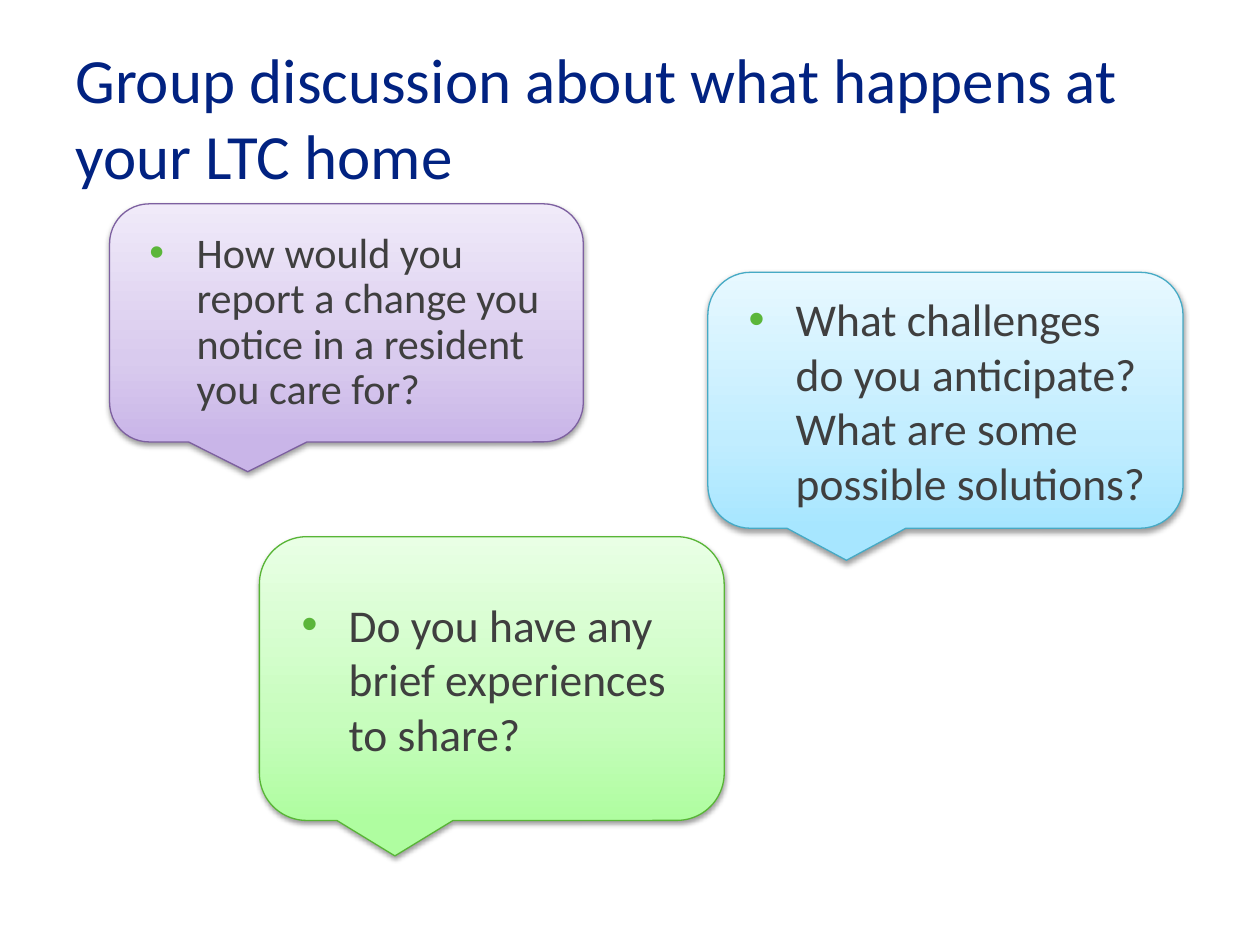
from dataclasses import dataclass
from lxml.etree import SubElement
from pptx import Presentation
from pptx.dml.color import RGBColor
from pptx.enum.shapes import MSO_SHAPE
from pptx.enum.text import MSO_ANCHOR, PP_ALIGN
from pptx.oxml import parse_xml
from pptx.oxml.ns import nsdecls, qn
from pptx.util import Cm, Pt


@dataclass(frozen=True)
class Theme:
    font: str = "Calibri"
    title: str = "012281"
    text: str = "3F3F3F"
    bullet: str = "5BB63A"
    head: float = 36
    body: float = 26
    small: float = 24.1
    # Each tone holds the stops from bottom to top, then the line.
    purple: tuple = ("C9B5E8", "D9CBEE", "F0EAF9", "7D60A0")
    blue: tuple = ("A7E6FF", "C1EDFF", "E7F8FF", "46AAC5")
    green: tuple = ("AFFDA0", "C7FDBD", "E9FFE5", "58B536")


THEME = Theme()


def style(para, size, color):
    para.alignment = PP_ALIGN.LEFT
    para.font.name = THEME.font
    para.font.size = Pt(size)
    para.font.color.rgb = RGBColor.from_string(color)


def write(shape, text):
    frame = shape.text_frame
    frame.word_wrap = True
    frame.vertical_anchor = MSO_ANCHOR.MIDDLE
    para = frame.paragraphs[0]
    para.text = text
    return para


def add_title(slide, text):
    box = slide.shapes.add_textbox(Cm(1.27), Cm(0.76), Cm(22.86), Cm(3.18))
    style(write(box, text), THEME.head, THEME.title)


def add_bullet(para):
    props = para._p.get_or_add_pPr()
    props.set("marL", str(Cm(1.27)))
    props.set("indent", str(-Cm(0.95)))
    color = SubElement(props, qn("a:buClr"))
    SubElement(color, qn("a:srgbClr"), val=THEME.bullet)
    SubElement(props, qn("a:buFont"), typeface="Arial")
    SubElement(props, qn("a:buChar"), char="•")


def shade(shape, colors):
    """Fill with a gradient that runs from bottom to top."""
    stops = "".join(
        f'<a:gs pos="{pos}"><a:srgbClr val="{color}"/></a:gs>'
        for pos, color in zip((0, 35000, 100000), colors)
    )
    shape.fill.background()
    plain = shape._element.spPr.find(qn("a:noFill"))
    plain.getparent().replace(plain, parse_xml(
        f'<a:gradFill {nsdecls("a")} rotWithShape="1"><a:gsLst>{stops}</a:gsLst>'
        '<a:lin ang="16200000" scaled="1"/></a:gradFill>'
    ))


def add_shadow(shape):
    shape.shadow.inherit = False
    effects = shape._element.spPr.find(qn("a:effectLst"))
    outer = SubElement(
        effects, qn("a:outerShdw"), blurRad=str(Pt(3.1)), dist=str(Pt(1.6)),
        dir="5400000", rotWithShape="0",
    )
    color = SubElement(outer, qn("a:srgbClr"), val="000000")
    SubElement(color, qn("a:alpha"), val="38000")


def add_bubble(slide, place, tone, text, size=THEME.body, space=1.0):
    shape = slide.shapes.add_shape(
        MSO_SHAPE.ROUNDED_RECTANGULAR_CALLOUT, *map(Cm, place)
    )
    *colors, edge = tone
    shade(shape, colors)
    shape.line.color.rgb = RGBColor.from_string(edge)
    shape.line.width = Pt(0.75)
    add_shadow(shape)
    para = write(shape, text)
    add_bullet(para)
    para.line_spacing = space
    style(para, size, THEME.text)


def main():
    deck = Presentation()
    deck.slide_width, deck.slide_height = Cm(25.4), Cm(19.05)
    slide = deck.slides.add_slide(deck.slide_layouts[6])
    add_title(slide, "Group discussion about what happens at your LTC home")
    add_bubble(
        slide, (2.21, 4.11, 9.55, 4.8), THEME.purple,
        "How would you report a change you notice in a resident you care for?",
        THEME.small, 0.9,
    )
    add_bubble(
        slide, (14.27, 5.49, 9.58, 5.16), THEME.blue,
        "What challenges do you anticipate? What are some possible solutions?",
    )
    add_bubble(
        slide, (5.23, 10.82, 9.37, 5.72), THEME.green,
        "Do you have any brief experiences to share?",
    )
    deck.save("out.pptx")


if __name__ == "__main__":
    main()
